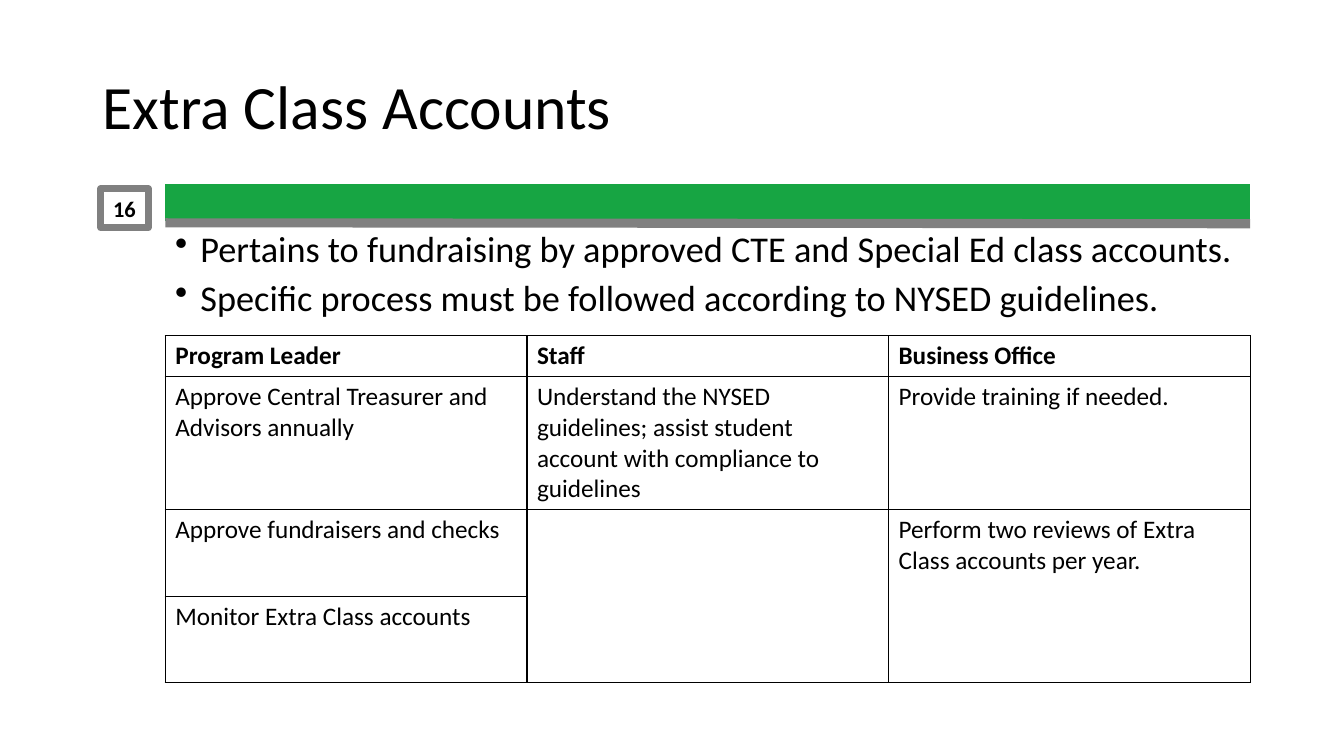
from lxml import etree
from pptx import Presentation, util as u
from pptx.dml.color import RGBColor
from pptx.enum import shapes, text
from pptx.oxml.ns import qn

WIDTH, HEIGHT = 13.33, 7.5
LEFT, SPAN = 12.3, 80.72  # shared by the bar, the bullets and the table


def color(value):
    return RGBColor.from_string(value)


def x(share):
    """Length from a percentage of the slide width."""
    return u.Inches(WIDTH * share / 100)


def y(share):
    """Length from a percentage of the slide height."""
    return u.Inches(HEIGHT * share / 100)


def box(left, top, width, height):
    return x(left), y(top), x(width), y(height)


class Deck:
    font, ink, green, grey = "Calibri", "000000", "17A543", "808080"

    def __init__(self):
        self.prs = Presentation()
        self.prs.slide_width = u.Inches(WIDTH)
        self.prs.slide_height = u.Inches(HEIGHT)
        self.slide = self.prs.slides.add_slide(self.prs.slide_layouts[6])

    def set_text(self, p, words, size, bold=False):
        p.text = words
        p.font.name, p.font.size, p.font.bold = self.font, u.Pt(size), bold
        p.font.color.rgb = color(self.ink)

    def frame(self, place, anchor):
        tf = self.slide.shapes.add_textbox(*box(*place)).text_frame
        tf.word_wrap, tf.vertical_anchor = True, anchor
        return tf

    def title(self, words, place):
        p = self.frame(place, text.MSO_ANCHOR.MIDDLE).paragraphs[0]
        self.set_text(p, words, 44)
        p.line_spacing = 0.9

    def bullets(self, items, place):
        tf = self.frame(place, text.MSO_ANCHOR.TOP)
        for i, item in enumerate(items):
            p = tf.add_paragraph() if i else tf.paragraphs[0]
            self.set_text(p, item, 25.9)
            p.line_spacing, p.space_before = 0.8, u.Pt(10)
            pPr = p._p.get_or_add_pPr()
            pPr.set("marL", str(u.Inches(0.25)))
            pPr.set("indent", str(-u.Inches(0.25)))
            bullet = etree.Element(qn("a:buChar"), char="•")
            pPr.find(qn("a:spcBef")).addnext(bullet)

    def rule(self, start, end, hue, weight):
        line = self.slide.shapes.add_connector(
            shapes.MSO_CONNECTOR.STRAIGHT,
            x(LEFT), y(start), x(LEFT + SPAN), y(end))
        line.line.color.rgb, line.line.width = color(hue), u.Pt(weight)
        etree.SubElement(line._element.spPr, qn("a:effectLst"))

    def page_number(self, number, place):
        sp = self.slide.shapes.add_shape(shapes.MSO_SHAPE.RECTANGLE, *box(*place))
        sp.shadow.inherit = False
        sp.fill.background()
        sp.line.color.rgb, sp.line.width = color(self.grey), u.Pt(4.75)
        tf = sp.text_frame
        tf.vertical_anchor, tf.word_wrap = text.MSO_ANCHOR.MIDDLE, False
        self.set_text(tf.paragraphs[0], number, 16, bold=True)
        tf.paragraphs[0].alignment = text.PP_ALIGN.CENTER

    def border(self, cell):
        tcPr = cell._tc.get_or_add_tcPr()
        for i, side in enumerate(("lnL", "lnR", "lnT", "lnB")):
            ln = etree.Element(qn(f"a:{side}"), w=str(u.Pt(1)))
            fill = etree.SubElement(ln, qn("a:solidFill"))
            etree.SubElement(fill, qn("a:srgbClr"), val=self.ink)
            tcPr.insert(i, ln)

    def table(self, rows, top, heights, merges):
        place = box(LEFT, top, SPAN, sum(heights))
        table = self.slide.shapes.add_table(len(rows), len(rows[0]), *place).table
        table.horz_banding = False
        for column in table.columns:
            column.width = x(SPAN / len(rows[0]))
        for r, (row, height) in enumerate(zip(rows, heights)):
            table.rows[r].height = y(height)
            for c, words in enumerate(row):
                cell = table.cell(r, c)
                cell.fill.background()
                self.border(cell)
                self.set_text(cell.text_frame.paragraphs[0], words, 18, bold=r == 0)
        for first, last in merges:
            table.cell(*first).merge(table.cell(*last))


def main():
    deck = Deck()
    deck.title("Extra Class Accounts", (6.9, 4.8, 86.27, 19.33))
    deck.bullets([
        "Pertains to fundraising by approved CTE and Special Ed class accounts.",
        "Specific process must be followed according to NYSED guidelines.",
    ], (LEFT, 30.4, SPAN, 13.2))
    deck.rule(26.8, 26.8, deck.green, 26.25)
    deck.page_number("16", (7.5, 24.93, 3.53, 5.2))
    deck.rule(29.47, 29.6, deck.grey, 6.5)
    deck.table([
        ("Program Leader", "Staff", "Business Office"),
        ("Approve Central Treasurer and Advisors annually",
         "Understand the NYSED guidelines; assist student account with "
         "compliance to guidelines",
         "Provide training if needed."),
        ("Approve fundraisers and checks", "",
         "Perform two reviews of Extra Class accounts per year."),
        ("Monitor Extra Class accounts", "", ""),
    ], 44.4, (5.4, 17.6, 11.47, 11.47), [((2, c), (3, c)) for c in (1, 2)])
    deck.prs.save("out.pptx")


if __name__ == "__main__":
    main()
